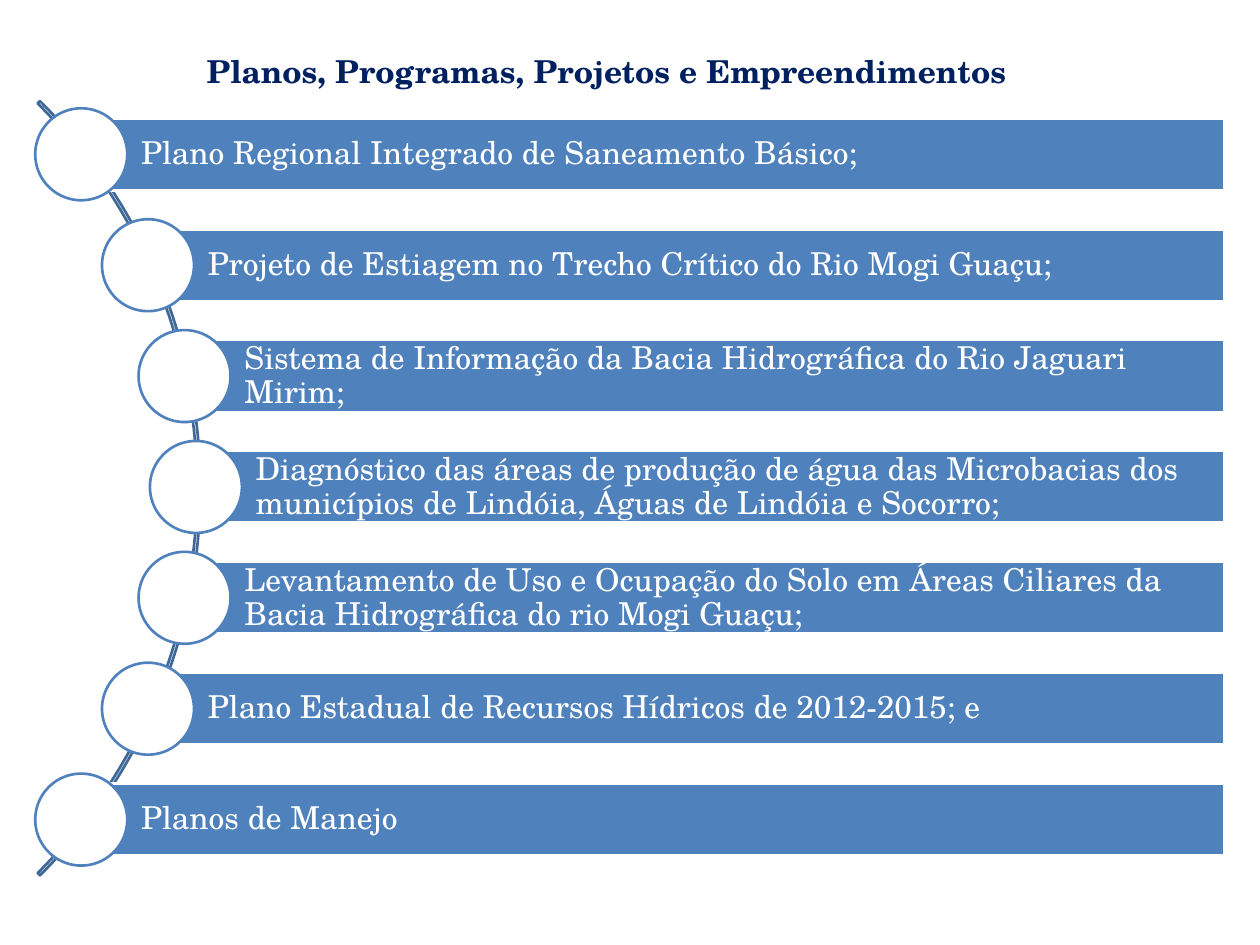
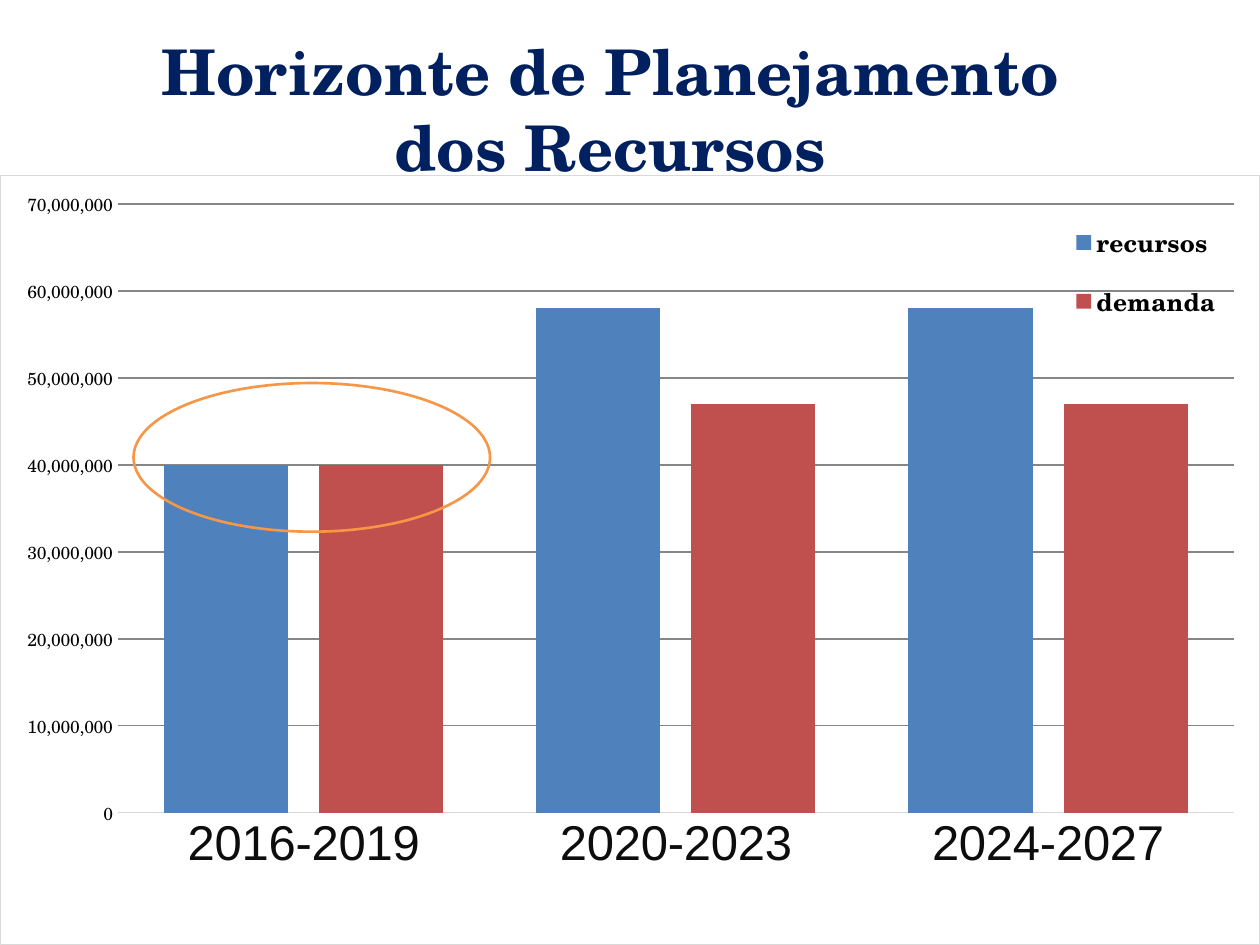
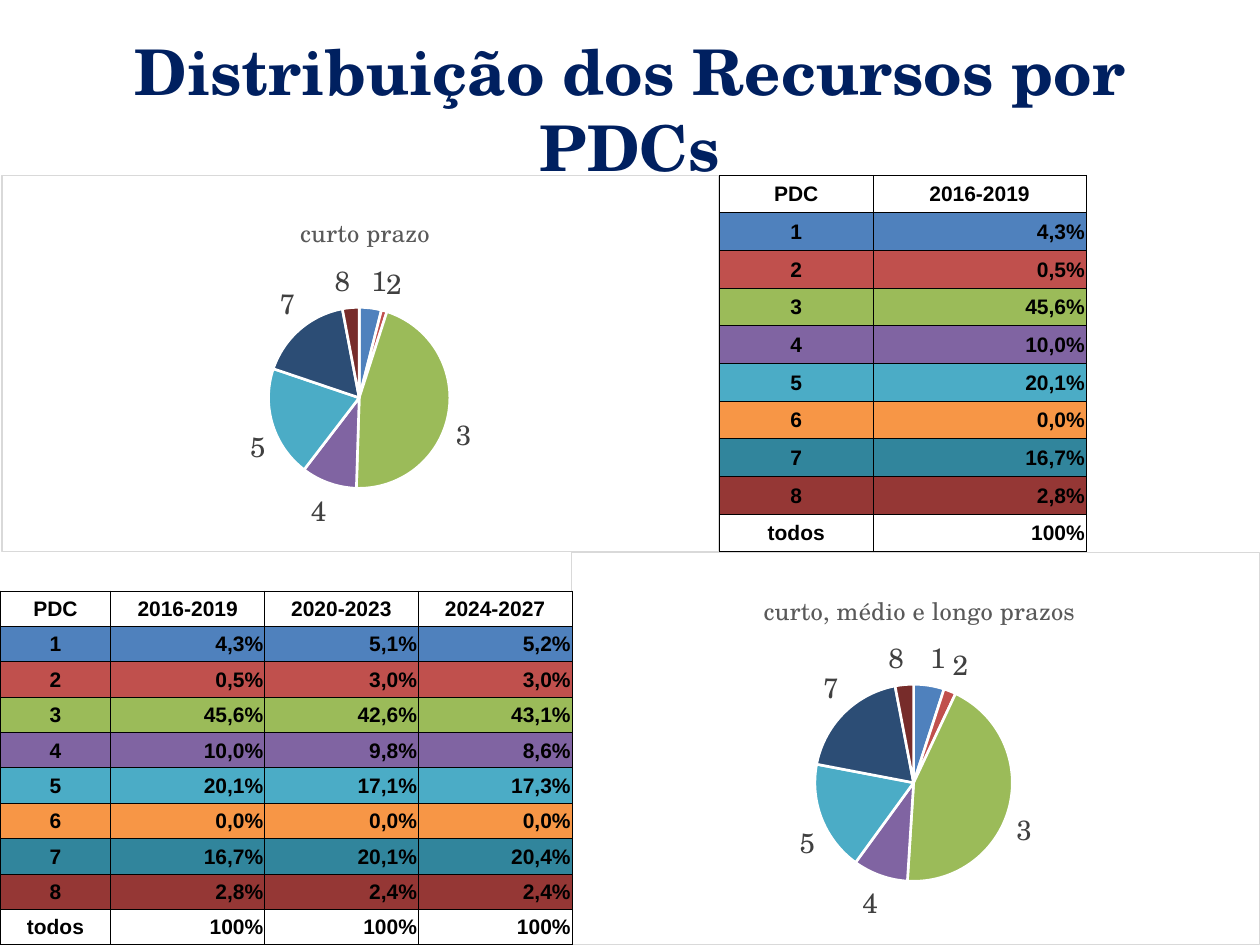
"""Build three slides on water basin plans, planned resources and their distribution."""
import pptx
import pptx.chart.data
import pptx.dml.color
import pptx.enum.chart
import pptx.enum.shapes
import pptx.enum.text
import pptx.oxml
import pptx.oxml.ns
import pptx.util

Inches = pptx.util.Inches
Pt = pptx.util.Pt
SHAPE = pptx.enum.shapes.MSO_SHAPE
ALIGN = pptx.enum.text.PP_ALIGN
ANCHOR = pptx.enum.text.MSO_ANCHOR
CHART = pptx.enum.chart.XL_CHART_TYPE
NONE_TICK = pptx.enum.chart.XL_TICK_MARK.NONE

SERIF, SANS = "TeX Gyre Schola", "Arial"
NAVY, BLUE, RED, ORANGE = "002060", "4F81BD", "C0504D", "F79646"
WHITE, BLACK, PALE = "FFFFFF", "000000", "D9D9D9"
SHARED_COLORS = [BLUE, RED, "9BBB59", "8064A2", "4BACC6", ORANGE]
PIE_COLORS = SHARED_COLORS + ["2C4D75", "772C2A"]
ROW_COLORS = [WHITE] + SHARED_COLORS + ["31859C", "953735", WHITE]
PERIODS = ["2016-2019", "2020-2023", "2024-2027"]
PLANS = [
    (0.65, "Plano Regional Integrado de Saneamento Básico;"),
    (1.18, "Projeto de Estiagem no Trecho Crítico do Rio Mogi Guaçu;"),
    (1.47, "Sistema de Informação da Bacia Hidrográfica do Rio Jaguari Mirim;"),
    (1.56, "Diagnóstico das áreas de produção de água das Microbacias dos "
           "municípios de Lindóia, Águas de Lindóia e Socorro;"),
    (1.47, "Levantamento de Uso e Ocupação do Solo em Áreas Ciliares da "
           "Bacia Hidrográfica do rio Mogi Guaçu;"),
    (1.18, "Plano Estadual de Recursos Hídricos de 2012-2015; e"),
    (0.65, "Planos de Manejo"),
]
PDC_ROWS = [
    ["PDC"] + PERIODS,
    ["1", "4,3%", "5,1%", "5,2%"],
    ["2", "0,5%", "3,0%", "3,0%"],
    ["3", "45,6%", "42,6%", "43,1%"],
    ["4", "10,0%", "9,8%", "8,6%"],
    ["5", "20,1%", "17,1%", "17,3%"],
    ["6", "0,0%", "0,0%", "0,0%"],
    ["7", "16,7%", "20,1%", "20,4%"],
    ["8", "2,8%", "2,4%", "2,4%"],
    ["todos", "100%", "100%", "100%"],
]


def rgb(color):
    """Turn a hex string into a colour."""
    return pptx.dml.color.RGBColor.from_string(color)


def box(*lengths):
    """Convert lengths in inches."""
    return [Inches(length) for length in lengths]


def apply(obj, values):
    """Set attributes from a dict."""
    for name, value in values.items():
        setattr(obj, name, value)


def style_font(font, size, color=BLACK, name=SERIF, bold=False):
    """Format a font."""
    apply(font, {"size": Pt(size), "name": name, "bold": bold})
    font.color.rgb = rgb(color)


def style_line(line, color, width):
    """Format a line."""
    line.color.rgb = rgb(color)
    line.width = Pt(width)


def add_slide(prs, title, at, size, align):
    """Add a slide with a formatted title."""
    s = prs.slides.add_slide(prs.slide_layouts[5])
    sp = s.shapes.title
    apply(sp, dict(zip(("left", "top", "width", "height"), box(*at))))
    tf = sp.text_frame
    tf.text = title
    apply(tf, {"word_wrap": True, "vertical_anchor": ANCHOR.TOP,
               "auto_size": pptx.enum.text.MSO_AUTO_SIZE.NONE})
    p = tf.paragraphs[0]
    p.alignment = align
    style_font(p.runs[0].font, size, NAVY, bold=True)
    return s


def add_figure(s, kind, at, line, fill=None):
    """Add a preset shape with a thin line."""
    sp = s.shapes.add_shape(kind, *box(*at))
    sp.shadow.inherit = False
    if fill:
        sp.fill.solid()
        sp.fill.fore_color.rgb = rgb(fill)
    else:
        sp.fill.background()
    style_line(sp.line, line, 1.5)
    return sp


def add_plan(s, left, top, text):
    """Add a plan's bar with the circle at its left end."""
    sp = add_figure(s, SHAPE.RECTANGLE, (left, top, 9.72 - left, 0.57), WHITE, BLUE)
    tf = sp.text_frame
    tf.text = text
    apply(tf, {"word_wrap": True, "vertical_anchor": ANCHOR.MIDDLE,
               "margin_left": Inches(0.47), "margin_right": Inches(0.05)})
    p = tf.paragraphs[0]
    apply(p, {"alignment": ALIGN.LEFT, "line_spacing": 0.9})
    style_font(p.runs[0].font, 18, WHITE)
    add_figure(s, SHAPE.OVAL, (left - 0.37, top - 0.08, 0.73, 0.73), BLUE, WHITE)


def set_layout(element, index, **fractions):
    """Place a chart part by fractions of the chart's size."""
    for old in element.findall(pptx.oxml.ns.qn("c:layout")):
        element.remove(old)
    modes = "".join(f'<c:{k}Mode val="edge"/>' for k in "xy")
    values = "".join(f'<c:{k} val="{v}"/>' for k, v in fractions.items())
    target = '<c:layoutTarget val="inner"/>' if index == 0 else ""
    element.insert(index, pptx.oxml.parse_xml(
        f'<c:layout {pptx.oxml.ns.nsdecls("c")}><c:manualLayout>'
        f'{target}{modes}{values}</c:manualLayout></c:layout>'))


def add_chart(s, kind, at, categories, series, plot_layout):
    """Add a chart with the shared font, frame and plot position."""
    data = pptx.chart.data.CategoryChartData()
    data.categories = categories
    for name, values in series:
        data.add_series(name, values)
    chart = s.shapes.add_chart(kind, *box(*at), data).chart
    style_font(chart.font, 10)
    root = chart._chartSpace
    root.chart.addnext(pptx.oxml.parse_xml(
        f'<c:spPr {pptx.oxml.ns.nsdecls("c", "a")}>'
        f'<a:solidFill><a:srgbClr val="{WHITE}"/></a:solidFill>'
        f'<a:ln w="9525"><a:solidFill><a:srgbClr val="{PALE}"/></a:solidFill></a:ln></c:spPr>'))
    set_layout(root.chart.plotArea, 0, **plot_layout)
    return chart


def add_resource_chart(s):
    """Add the column chart of resources and demand."""
    series = [("recursos", (40000000, 58000000, 58000000)),
              ("demanda", (40000000, 47000000, 47000000))]
    chart = add_chart(s, CHART.COLUMN_CLUSTERED, (0, 1.39, 10, 6.11), PERIODS, series,
                      {"x": 0.093, "y": 0.037, "w": 0.887, "h": 0.792})
    plot = chart.plots[0]
    apply(plot, {"gap_width": 75, "overlap": -25, "vary_by_categories": False})
    for ser, color in zip(plot.series, (BLUE, RED)):
        ser.format.fill.solid()
        ser.format.fill.fore_color.rgb = rgb(color)
    for axis in (chart.category_axis, chart.value_axis):
        apply(axis, {"major_tick_mark": NONE_TICK, "minor_tick_mark": NONE_TICK})
    style_font(chart.category_axis.tick_labels.font, 28, "0D0D0D", SANS)
    style_line(chart.category_axis.format.line, PALE, 0.75)
    axis = chart.value_axis
    apply(axis, {"minimum_scale": 0, "maximum_scale": 70000000,
                 "major_unit": 10000000, "has_major_gridlines": True})
    apply(axis.tick_labels, {"number_format": "#,##0", "number_format_is_linked": False})
    axis.format.line.fill.background()
    style_line(axis.major_gridlines.format.line, "868686", 0.75)
    chart.has_legend = True
    legend = chart.legend
    apply(legend, {"position": pptx.enum.chart.XL_LEGEND_POSITION.BOTTOM,
                   "include_in_layout": True})
    style_font(legend.font, 14, bold=True)
    set_layout(legend._element, 1, x=0.845, y=0.035, w=0.13, h=0.18)


def add_pdc_pie(s, at, title, title_x, values, plot_layout):
    """Add a pie of the PDC shares."""
    chart = add_chart(s, CHART.PIE, at, [row[0] for row in PDC_ROWS[1:-1]],
                      [("Series 1", values)], plot_layout)
    chart.has_legend = False
    chart.has_title = True
    tf = chart.chart_title.text_frame
    tf.text = title
    style_font(tf.paragraphs[0].runs[0].font, 14, "595959")
    set_layout(chart.chart_title._element, 1, x=title_x, y=0.08)
    plot = chart.plots[0]
    plot.vary_by_categories = True
    ser = plot.series[0]
    for i, color in enumerate(PIE_COLORS):
        form = ser.points[i].format
        form.fill.solid()
        form.fill.fore_color.rgb = rgb(color)
        style_line(form.line, WHITE, 1.5)
    labels = ser.data_labels
    apply(labels, {"show_category_name": True, "show_value": False,
                   "show_percentage": False,
                   "position": pptx.enum.chart.XL_LABEL_POSITION.OUTSIDE_END})
    style_font(labels.font, 16, "404040")
    labels._element.insert(0, pptx.oxml.parse_xml(
        f'<c:dLbl {pptx.oxml.ns.nsdecls("c")}>'
        f'<c:idx val="{values.index(0)}"/><c:delete val="1"/></c:dLbl>'))


def style_cell(cell, text, align, fill):
    """Fill in and format a bordered cell."""
    cell.text = text
    apply(cell, {"vertical_anchor": ANCHOR.MIDDLE, "margin_left": Inches(0.01),
                 "margin_right": Inches(0.01), "margin_top": Inches(0.01),
                 "margin_bottom": 0})
    p = cell.text_frame.paragraphs[0]
    p.alignment = align
    style_font(p.runs[0].font, 12, name=SANS, bold=True)
    for side in "LRTB":
        cell._tc.get_or_add_tcPr().append(pptx.oxml.parse_xml(
            f'<a:ln{side} {pptx.oxml.ns.nsdecls("a")} w="6350"><a:solidFill>'
            f'<a:srgbClr val="{BLACK}"/></a:solidFill></a:ln{side}>'))
    cell.fill.solid()
    cell.fill.fore_color.rgb = rgb(fill)


def add_pdc_table(s, left, top, height, widths):
    """Add a table of PDC shares with one column for each width."""
    rows = [row[:len(widths)] for row in PDC_ROWS]
    table = s.shapes.add_table(len(rows), len(widths),
                               *box(left, top, sum(widths), height)).table
    for column, width in zip(table.columns, widths):
        column.width = Inches(width)
    for i, row in enumerate(rows):
        table.rows[i].height = Inches(height / len(rows))
        for j, text in enumerate(row):
            align = ALIGN.RIGHT if i and j else ALIGN.CENTER
            style_cell(table.cell(i, j), text, align, ROW_COLORS[i])


def main():
    """Build and save the presentation."""
    prs = pptx.Presentation()
    prs.slide_width, prs.slide_height = box(10, 7.5)

    s = add_slide(prs, "Planos, Programas, Projetos e Empreendimentos",
                  (1.54, 0.36, 7.17, 0.4), 18, ALIGN.LEFT)
    arc = add_figure(s, SHAPE.BLOCK_ARC, (-7.1, -0.47, 8.69, 8.69), "3F6797")
    for i, value in enumerate((189, 27, 0.003)):
        arc.adjustments[i] = value
    for i, (left, text) in enumerate(PLANS):
        add_plan(s, left, 0.94 + 0.88 * i, text)

    s = add_slide(prs, "Horizonte de Planejamento dos Recursos",
                  (0.83, 0.21, 8.03, 1.34), 36, ALIGN.CENTER)
    add_resource_chart(s)
    add_figure(s, SHAPE.OVAL, (1.06, 3.04, 2.83, 1.18), ORANGE)

    s = add_slide(prs, "Distribuição dos Recursos por PDCs",
                  (0.5, 0.21, 9, 1), 36, ALIGN.CENTER)
    add_pdc_pie(s, (0.01, 1.39, 5.7, 2.99), "curto prazo", 0.41,
                (4, 1, 46, 10, 20, 0, 17, 3),
                {"x": 0.372, "y": 0.35, "w": 0.253, "h": 0.483})
    add_pdc_pie(s, (4.53, 4.38, 5.47, 3.12), "curto, médio e longo prazos", 0.273,
                (5, 2, 44, 9, 18, 0, 19, 3),
                {"x": 0.354, "y": 0.336, "w": 0.287, "h": 0.504})
    add_pdc_table(s, 5.71, 1.39, 2.99, [1.22, 1.69])
    add_pdc_table(s, 0, 4.69, 2.81, [0.88, 1.22, 1.22, 1.22])
    prs.save("out.pptx")


if __name__ == "__main__":
    main()
